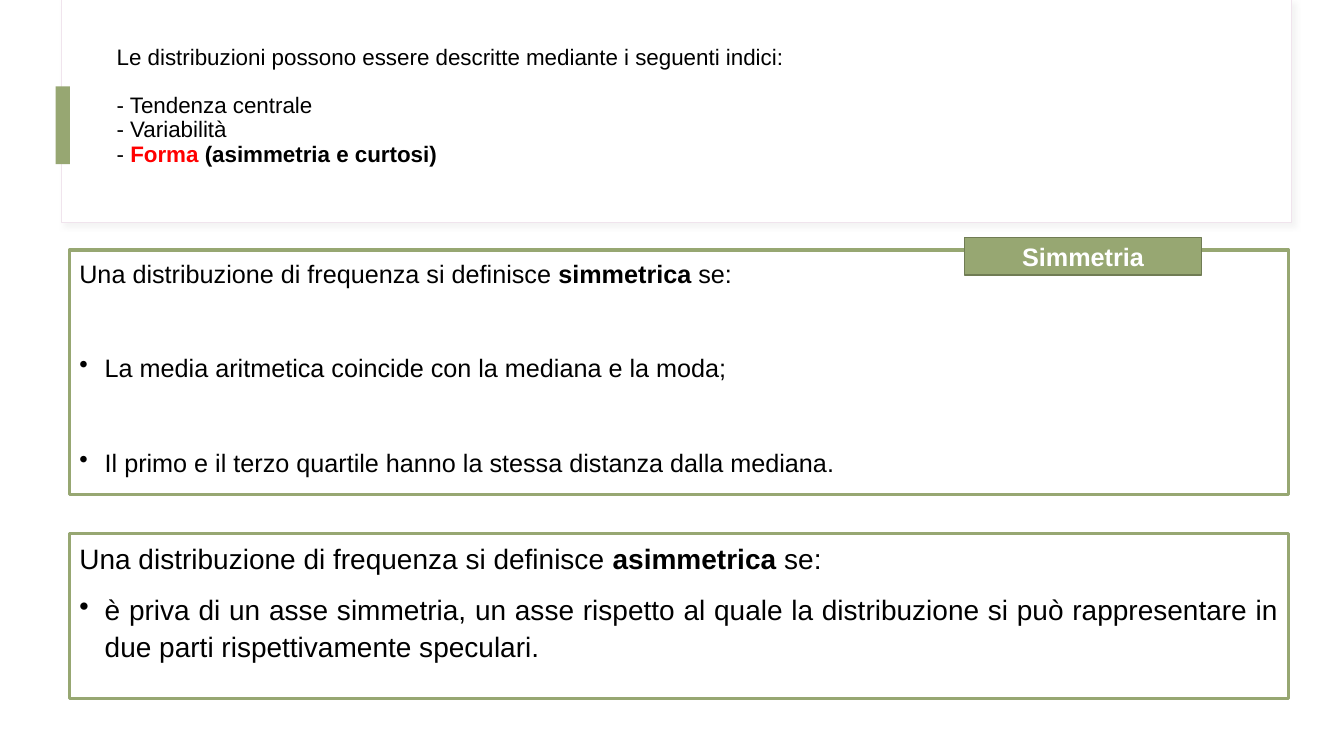
from lxml import etree
from pptx import Presentation
from pptx.dml.color import RGBColor
from pptx.enum.shapes import MSO_SHAPE
from pptx.enum.text import MSO_ANCHOR, PP_ALIGN
from pptx.util import Cm, Pt

RECT = MSO_SHAPE.RECTANGLE
TOP, MIDDLE = MSO_ANCHOR.TOP, MSO_ANCHOR.MIDDLE
LEFT, CENTER, JUSTIFY = PP_ALIGN.LEFT, PP_ALIGN.CENTER, PP_ALIGN.JUSTIFY

BLACK = RGBColor(0x00, 0x00, 0x00)
WHITE = RGBColor(0xFF, 0xFF, 0xFF)
RED = RGBColor(0xFF, 0x00, 0x00)
GREEN = RGBColor(0x97, 0xA7, 0x72)
OLIVE = RGBColor(0x70, 0x7C, 0x54)
PINK = RGBColor(0xF0, 0xE4, 0xED)

NS = "http://schemas.openxmlformats.org/drawingml/2006/main"
SHADE = (
    f'<a:effectLst xmlns:a="{NS}"><a:outerShdw blurRad="50800" dist="38100" '
    'dir="2700000"><a:srgbClr val="D9D9D9"><a:alpha val="30000"/></a:srgbClr>'
    "</a:outerShdw></a:effectLst>"
)

PLAIN = {"name": "Arial", "bold": False}
TITLE = {"alignment": LEFT, "line_spacing": 0.9}
BODY = {"alignment": JUSTIFY, "line_spacing": 1.1}
ITEM = BODY | {"space_before": Pt(10)}
SPACED = BODY | {"space_before": Pt(43.8)}
LABEL = {"alignment": CENTER}


def assign(target, values):
    for name, value in values.items():
        setattr(target, name, value)


def add_rect(slide, area, fill=None, line=None, width=1):
    rect = slide.shapes.add_shape(RECT, *map(Cm, area))
    rect.shadow.inherit = False
    if fill is None:
        rect.fill.background()
    else:
        rect.fill.solid()
        rect.fill.fore_color.rgb = fill
    if line is None:
        rect.line.fill.background()
    else:
        rect.line.color.rgb = line
        rect.line.width = Pt(width)
    return rect


def add_shade(rect):
    props = rect.element.spPr
    props.remove(props.find(f"{{{NS}}}effectLst"))
    props.append(etree.fromstring(SHADE))


def add_bullet(para):
    props = para._p.get_or_add_pPr()
    props.set("marL", str(Cm(0.64)))
    props.set("indent", str(-Cm(0.64)))
    etree.SubElement(props, f"{{{NS}}}buChar").set("char", "•")


def write(shape, size, paras, anchor=TOP):
    frame = shape.text_frame
    assign(frame, {"word_wrap": True, "vertical_anchor": anchor})
    for index, (runs, style, bullet) in enumerate(paras):
        para = frame.add_paragraph() if index else frame.paragraphs[0]
        if bullet:
            add_bullet(para)
        assign(para, style)
        for text, color, bold in runs:
            run = para.add_run()
            run.text = text
            assign(run.font, PLAIN | {"size": Pt(size), "bold": bold})
            run.font.color.rgb = color


def plain(text):
    return [(text, BLACK, False)]


def define(term):
    return [
        ("Una distribuzione di frequenza si definisce ", BLACK, False),
        (term, BLACK, True),
        (" se:", BLACK, False),
    ]


def add_head(slide):
    panel = add_rect(slide, (1.55, 0, 31.01, 5.61), WHITE, PINK, 0.75)
    add_shade(panel)
    add_rect(slide, (1.4, 2.18, 0.36, 1.96), GREEN)
    title = slide.shapes.add_textbox(*map(Cm, (2.69, 0, 28.24, 5.38)))
    intro = "Le distribuzioni possono essere descritte mediante i seguenti indici:"
    form = [
        ("- ", BLACK, False),
        ("Forma ", RED, True),
        ("(asimmetria e curtosi)", BLACK, True),
    ]
    write(title, 16, [
        (plain(intro), TITLE | {"space_after": Pt(17)}, False),
        (plain("- Tendenza centrale"), TITLE, False),
        (plain("- Variabilità"), TITLE, False),
        (form, TITLE, False),
    ], MIDDLE)


def add_box(slide, top, height, size, term, items, style):
    box = add_rect(slide, (1.75, top, 30.73, height), None, GREEN, 2.25)
    paras = [(define(term), BODY, False)]
    paras += [(plain(item), style, True) for item in items]
    write(box, size, paras)


def add_tag(slide, text):
    tag = add_rect(slide, (24.31, 5.99, 5.97, 0.94), GREEN, OLIVE)
    write(tag, 18, [([(text, WHITE, True)], LABEL, False)], MIDDLE)


def main():
    deck = Presentation()
    assign(deck, {"slide_width": Cm(33.87), "slide_height": Cm(19.05)})
    slide = deck.slides.add_slide(deck.slide_layouts[6])
    add_head(slide)
    add_box(slide, 6.3, 6.17, 18, "simmetrica", [
        "La media aritmetica coincide con la mediana e la moda;",
        "Il primo e il terzo quartile hanno la stessa distanza dalla mediana.",
    ], SPACED)
    add_box(slide, 13.44, 4.17, 20, "asimmetrica", [
        "è priva di un asse simmetria, un asse rispetto al quale la distribuzione "
        "si può rappresentare in due parti rispettivamente speculari.",
    ], ITEM)
    add_tag(slide, "Simmetria")
    deck.save("out.pptx")


if __name__ == "__main__":
    main()
